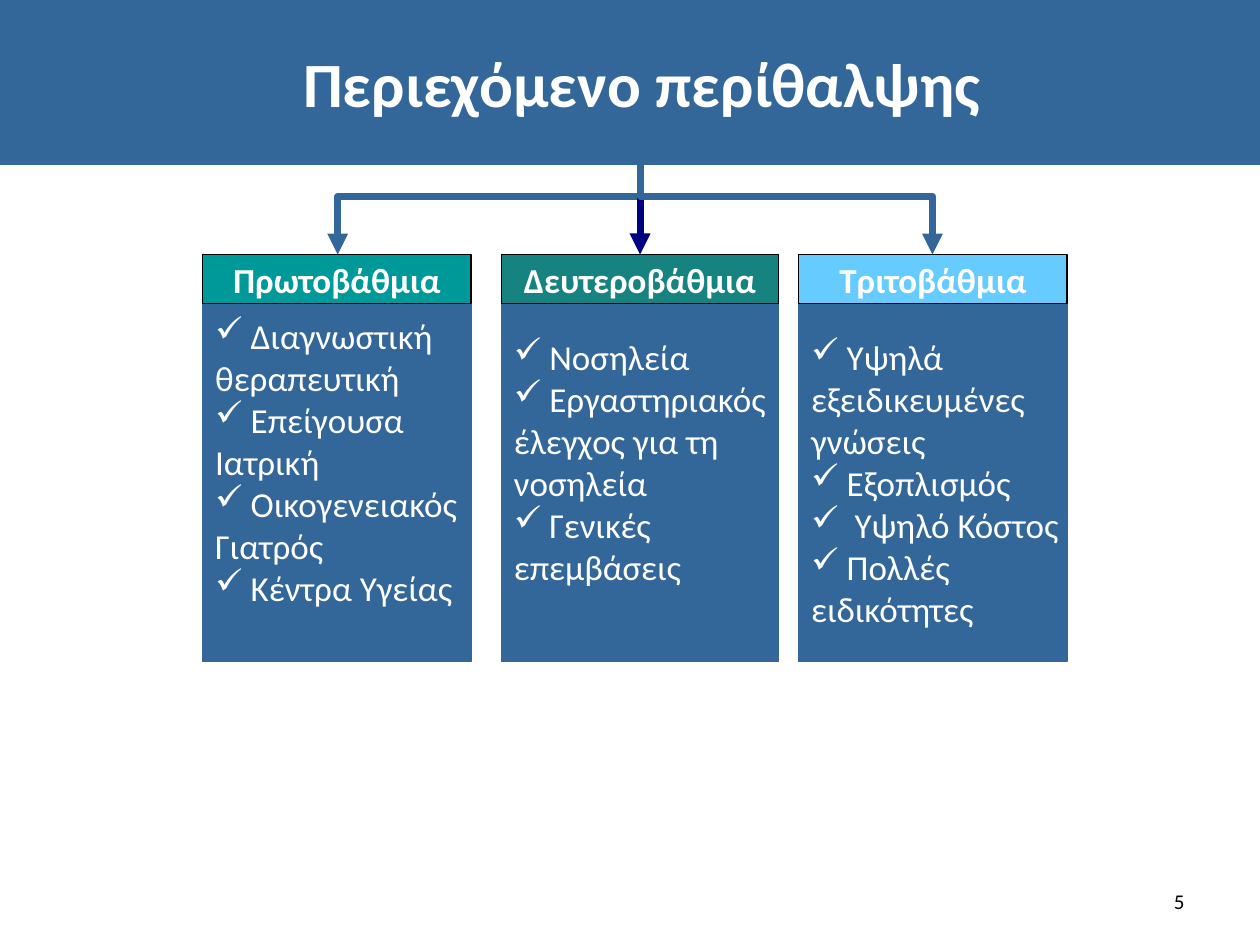
import pptx
import pptx.util
import pptx.dml.color
import pptx.enum.shapes
import pptx.enum.text
import pptx.oxml.ns
import lxml.etree

Inches, Pt = pptx.util.Inches, pptx.util.Pt
qn = pptx.oxml.ns.qn
Align = pptx.enum.text.PP_ALIGN
Link = pptx.enum.shapes.MSO_CONNECTOR


def tint(hue):
    return pptx.dml.color.RGBColor.from_string(hue)


def put(box, text, size, hue="FFFFFF", bold=False, align=Align.CENTER):
    frame = box.text_frame
    frame.text = text
    frame.vertical_anchor = pptx.enum.text.MSO_ANCHOR.MIDDLE
    for para in frame.paragraphs:
        para.alignment = align
        for run in para.runs:
            run.font.name = "Calibri"
            run.font.size = Pt(size)
            run.font.bold = bold
            run.font.color.rgb = tint(hue)
    return frame


deck = pptx.Presentation()
deck.slide_width, deck.slide_height = Inches(10), Inches(7.5)
slide = deck.slides.add_slide(deck.slide_layouts[6])
shapes = slide.shapes
rect = pptx.enum.shapes.MSO_SHAPE.RECTANGLE

levels = [
    (1.61, 2.13, "009999", "Πρωτοβάθμια", 0.39,
     ["✓ Διαγνωστική", "θεραπευτική", "✓ Επείγουσα", "Ιατρική",
      "✓ Οικογενειακός", "Γιατρός", "✓ Κέντρα Υγείας"]),
    (3.98, 2.2, "178380", "Δευτεροβάθμια", 0.39,
     ["✓ Νοσηλεία", "✓ Εργαστηριακός", "έλεγχος για τη", "νοσηλεία",
      "✓ Γενικές", "επεμβάσεις"]),
    (6.34, 2.13, "66CCFF", "Τριτοβάθμια", 0.05,
     ["✓ Υψηλά", "εξειδικευμένες", "γνώσεις", "✓ Εξοπλισμός",
      "✓  Υψηλό Κόστος", "✓ Πολλές", "ειδικότητες"]),
]

heads = []
for left, width, hue, name, foot, lines in levels:
    card = shapes.add_shape(rect, Inches(left), Inches(2.41), Inches(width), Inches(2.84))
    head = shapes.add_shape(rect, Inches(left), Inches(2.02), Inches(width), Inches(0.39))
    heads.append(head)
    for box, fill, edge in [(card, "336699", "336699"), (head, hue, "000000")]:
        box.shadow.inherit = False
        box.fill.solid()
        box.fill.fore_color.rgb = tint(fill)
        box.line.color.rgb = tint(edge)
        box.line.width = Pt(0.75)
    put(head, name, 20, bold=True).word_wrap = False
    text = "\n".join(line.lstrip("✓") for line in lines)
    frame = put(card, text, 20, align=Align.LEFT)
    frame.word_wrap = False
    frame.margin_bottom = Inches(foot)
    for para, line in zip(frame.paragraphs, lines):
        if line.startswith("✓"):
            props = para._p.get_or_add_pPr()
            shade = lxml.etree.SubElement(props, qn("a:buClr"))
            lxml.etree.SubElement(shade, qn("a:srgbClr")).set("val", "FFFFFF")
            lxml.etree.SubElement(props, qn("a:buChar")).set("char", "✓")

hub, top, drop = 5.08, 1.1, 0.92
mid = top + drop / 2
for goal, hue, turn in [(2.68, "336699", 90), (hub, "000080", 0), (7.4, "336699", 270)]:
    if turn:
        span = abs(goal - hub)
        half = drop / 2 if turn == 90 else -drop / 2
        x = (hub + goal) / 2
        link = shapes.add_connector(
            Link.ELBOW, Inches(x - half), Inches(mid - span / 2),
            Inches(x + half), Inches(mid + span / 2))
        link.element.spPr.find(qn("a:xfrm")).set("rot", str(turn * 60000))
    else:
        link = shapes.add_connector(
            Link.STRAIGHT, Inches(hub), Inches(top), Inches(hub), Inches(top + drop))
        link.end_connect(heads[1], 0)
    link.line.color.rgb = tint(hue)
    link.line.width = Pt(4)
    lxml.etree.SubElement(link.line._get_or_add_ln(), qn("a:tailEnd")).set("type", "triangle")
    lxml.etree.SubElement(link.element.spPr, qn("a:effectLst"))

title = shapes.add_shape(rect, 0, 0, Inches(10), Inches(1.31))
title.shadow.inherit = False
title.fill.solid()
title.fill.fore_color.rgb = tint("336699")
title.line.fill.background()
frame = put(title, "Περιεχόμενο περίθαλψης", 36, bold=True)
frame.paragraphs[0]._p.get_or_add_pPr().set("marL", str(Inches(0.19)))

page = shapes.add_textbox(Inches(7.17), Inches(6.95), Inches(2.33), Inches(0.4))
put(page, "5", 12, "000000", align=Align.RIGHT).word_wrap = True

deck.save("out.pptx")
